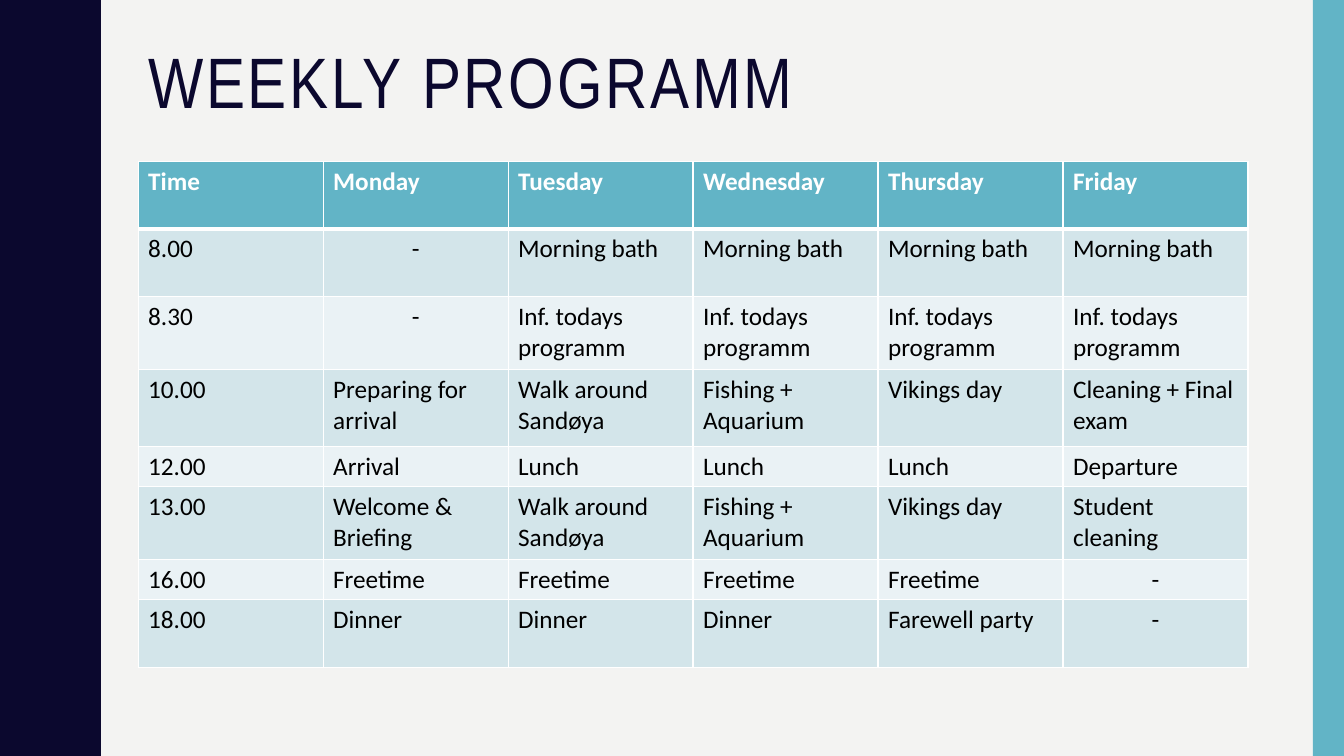
from lxml import etree
from pptx import Presentation
from pptx import util as u
from pptx.dml.color import RGBColor
from pptx.enum import shapes, text
from pptx.oxml import ns

WIDTH, HEIGHT = 13.33, 7.5
NAVY, TEAL, PAPER, WHITE, BLACK = "0B082E", "62B4C6", "F3F3F2", "FFFFFF", "000000"
BANDS = ("D3E5EA", "EAF2F5")
TITLE = "WEEKLY PROGRAMM"
PROGRAMME = [
    ("Time", "Monday", "Tuesday", "Wednesday", "Thursday", "Friday"),
    ("8.00", "-") + ("Morning bath",) * 4,
    ("8.30", "-") + ("Inf. todays programm",) * 4,
    ("10.00", "Preparing for arrival", "Walk around Sandøya", "Fishing + Aquarium",
     "Vikings day", "Cleaning + Final exam"),
    ("12.00", "Arrival", "Lunch", "Lunch", "Lunch", "Departure"),
    ("13.00", "Welcome & Briefing", "Walk around Sandøya", "Fishing + Aquarium",
     "Vikings day", "Student cleaning"),
    ("16.00",) + ("Freetime",) * 4 + ("-",),
    ("18.00", "Dinner", "Dinner", "Dinner", "Farewell party", "-"),
]
ROW_HEIGHTS = (0.67, 0.67, 0.73, 0.76, 0.39, 0.72, 0.39, 0.67)
LEFT, TABLE_TOP, TABLE_WIDTH = 1.37, 1.6, 11.01
WAVES = 5
HALF_WAVE = [(0.78, 0), (0.78, 0.07), (0.79, 0.14), (0.8, 0.2), (0.81, 0.25),
             (0.83, 0.29), (0.85, 0.33), (0.87, 0.38), (0.89, 0.42), (0.91, 0.46),
             (0.93, 0.5), (0.95, 0.55), (0.96, 0.61), (0.97, 0.68), (0.97, 0.75)]


def color(value):
    """Turn a hex string into a colour."""
    return RGBColor.from_string(value)


def paint(shape, value):
    """Give a shape a plain fill without line or shadow."""
    shape.fill.solid()
    shape.fill.fore_color.rgb = color(value)
    shape.line.fill.background()
    shape.shadow.inherit = False


def write(para, words, font, size, value, bold=False):
    """Add one styled run to a paragraph."""
    span = para.add_run()
    span.text = words
    span.font.name, span.font.size, span.font.bold = font, u.Pt(size), bold
    span.font.color.rgb = color(value)
    return span


def add_border(cell, side, points):
    """Add a white line to one side of a cell."""
    line = etree.SubElement(cell._tc.get_or_add_tcPr(), ns.qn(f"a:ln{side}"), w=str(u.Pt(points)))
    fill = etree.SubElement(line, ns.qn("a:solidFill"))
    etree.SubElement(fill, ns.qn("a:srgbClr"), val=WHITE)


def add_edges(page):
    """Draw the wavy left edge and the right bar."""
    period = HEIGHT / WAVES
    wave = HALF_WAVE + [(x, period - y) for x, y in HALF_WAVE[-2::-1]]
    points = [(x, y + period * turn) for turn in range(WAVES) for x, y in wave]
    builder = page.shapes.build_freeform(0, 0, scale=u.Inches(1))
    builder.add_line_segments(points + [(0, HEIGHT)], close=True)
    paint(builder.convert_to_shape(), NAVY)
    bar = page.shapes.add_shape(shapes.MSO_SHAPE.RECTANGLE, u.Inches(13.02), 0,
                                u.Inches(WIDTH - 13.02), u.Inches(HEIGHT))
    paint(bar, TEAL)


def add_title(page):
    """Write the heading."""
    box = page.shapes.add_textbox(*map(u.Inches, (LEFT, 0.42, 11.13, 1.63)))
    box.text_frame.word_wrap = True
    para = box.text_frame.paragraphs[0]
    para.line_spacing = 0.9
    span = write(para, TITLE, "Arial Narrow", 51, NAVY)
    span.font._element.set("spc", "200")


def add_programme(page):
    """Build the timetable."""
    rows, columns = len(PROGRAMME), len(PROGRAMME[0])
    frame = page.shapes.add_table(rows, columns, *map(u.Inches, (
        LEFT, TABLE_TOP, TABLE_WIDTH, sum(ROW_HEIGHTS))))
    table = frame.table
    table.horz_banding = False
    for column in table.columns:
        column.width = u.Inches(TABLE_WIDTH / columns)
    for r, entries in enumerate(PROGRAMME):
        table.rows[r].height = u.Inches(ROW_HEIGHTS[r])
        header = r == 0
        for c, words in enumerate(entries):
            cell = table.cell(r, c)
            for side, points in (("L", 1), ("R", 1), ("T", 3 if r == 1 else 1),
                                 ("B", 3 if header else 1)):
                add_border(cell, side, points)
            cell.fill.solid()
            cell.fill.fore_color.rgb = color(TEAL if header else BANDS[(r - 1) % 2])
            para = cell.text_frame.paragraphs[0]
            if words == "-":
                para.alignment = text.PP_ALIGN.CENTER
            write(para, words, "Calibri", 18, WHITE if header else BLACK, header)


def main():
    """Build and save the weekly programme slide."""
    deck = Presentation()
    deck.slide_width, deck.slide_height = u.Inches(WIDTH), u.Inches(HEIGHT)
    page = deck.slides.add_slide(deck.slide_layouts[6])
    page.background.fill.solid()
    page.background.fill.fore_color.rgb = color(PAPER)
    add_edges(page)
    add_title(page)
    add_programme(page)
    deck.save("out.pptx")


if __name__ == "__main__":
    main()
